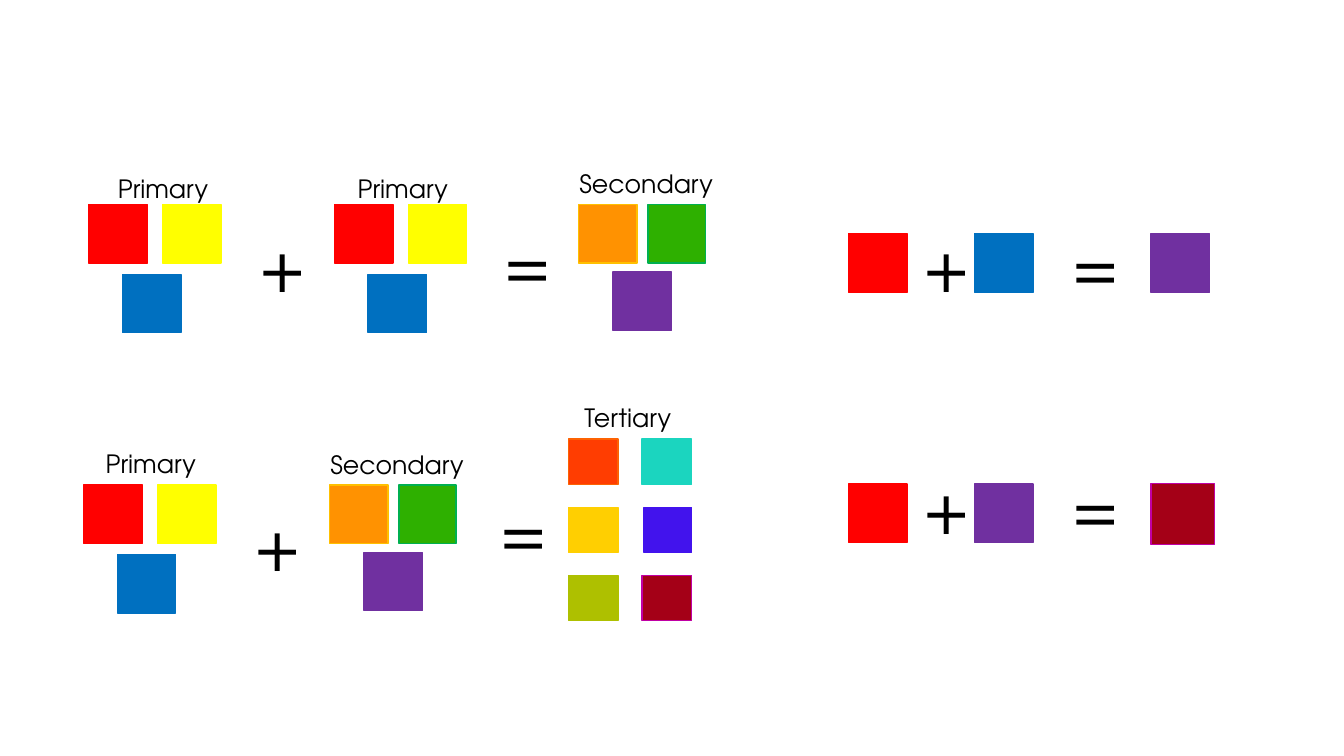
from pptx import Presentation
from pptx.dml.color import RGBColor
from pptx.enum.shapes import MSO_SHAPE
from pptx.util import Pt

FONT = "TeX Gyre Adventor"
SIDE = 41.8
BLACK = RGBColor(0, 0, 0)
RED = RGBColor(0xFF, 0, 0)
YELLOW = RGBColor(0xFF, 0xFF, 0)
BLUE = RGBColor(0, 0x70, 0xC0)
ORANGE = RGBColor(0xFF, 0x92, 0x01)
AMBER = RGBColor(0xFF, 0xC0, 0)
GREEN = RGBColor(0x2E, 0xB0, 0)
JADE = RGBColor(0, 0xB0, 0x50)
PURPLE = RGBColor(0x70, 0x30, 0xA0)
VERMILION = RGBColor(0xFF, 0x3D, 0x01)
FLAME = RGBColor(0xFD, 0x62, 0x03)
TEAL = RGBColor(0x1B, 0xD5, 0xBF)
GOLD = RGBColor(0xFF, 0xCF, 0x01)
INDIGO = RGBColor(0x42, 0x13, 0xED)
LIME = RGBColor(0xAE, 0xC0, 0)
CRIMSON = RGBColor(0xA4, 0, 0x17)
MAGENTA = RGBColor(0xC0, 0, 0xA5)
EDGES = {ORANGE: AMBER, GREEN: JADE, VERMILION: FLAME, CRIMSON: MAGENTA}


def swatch(slide, left, top, color, width=SIDE, height=SIDE):
    shape = slide.shapes.add_shape(
        MSO_SHAPE.RECTANGLE, Pt(left), Pt(top), Pt(width), Pt(height))
    shape.shadow.inherit = False
    shape.fill.solid()
    shape.fill.fore_color.rgb = color
    shape.line.color.rgb = EDGES.get(color, color)
    shape.line.width = Pt(1)


def write(slide, text, left, top, width, height, size):
    box = slide.shapes.add_textbox(Pt(left), Pt(top), Pt(width), Pt(height))
    frame = box.text_frame
    frame.word_wrap = True
    frame.margin_right = 0
    line = frame.paragraphs[0]
    line.text = text
    line.font.name = FONT
    line.font.size = Pt(size)
    line.font.color.rgb = BLACK


def label(slide, text, left, top):
    write(slide, text, left, top, 118, 29, 18)


def sign(slide, text, left, top):
    write(slide, text, left, top, 60, 65.5, 48)


def primary(slide, left, top, inset, rise):
    """Three primary swatches, with the label inset and raised from them."""
    swatch(slide, left, top, RED)
    swatch(slide, left + 52.6, top, YELLOW)
    swatch(slide, left + 24, top + 49.7, BLUE)
    label(slide, "Primary", left + inset, top - rise)


def secondary(slide, left, top):
    swatch(slide, left, top, ORANGE)
    swatch(slide, left + 49.5, top, GREEN, 41)
    swatch(slide, left + 24.5, top + 48.2, PURPLE)
    label(slide, "Secondary", left - 6.5, top - 29.2)


def tertiary(slide, left, top):
    rows = [(VERMILION, TEAL), (GOLD, INDIGO), (LIME, CRIMSON)]
    for row, pair in enumerate(rows):
        for col, color in enumerate(pair):
            trim = 1.4 if color == INDIGO else 0
            swatch(slide, left + 52.6 * col + trim, top + 48.7 * row,
                   color, 35.3 - trim, 32.4)
    label(slide, "Tertiary", left + 4.3, top - 29.5)


def mix(slide, left, top, first, second, result, rise, size=(SIDE, SIDE)):
    """One worked sum of two colours, its signs raised above the swatches."""
    swatch(slide, left, top, first)
    sign(slide, "+", left + 45.4, top - rise)
    swatch(slide, left + 90, top, second)
    sign(slide, "=", left + 152, top - rise)
    swatch(slide, left + 216, top, result, *size)


def main():
    deck = Presentation()
    deck.slide_width, deck.slide_height = Pt(960), Pt(540)
    slide = deck.slides.add_slide(deck.slide_layouts[6])

    primary(slide, 63.4, 146.2, 13.7, 26)
    sign(slide, "+", 177.8, 156.2)
    primary(slide, 239, 146.2, 9.4, 26)
    sign(slide, "=", 352.8, 154.8)
    secondary(slide, 413.3, 146.2)

    primary(slide, 59.8, 346.3, 8.6, 29.5)
    sign(slide, "+", 174.2, 355)
    secondary(slide, 235.4, 346.3)
    sign(slide, "=", 349.9, 346.3)
    tertiary(slide, 406.1, 313.6)

    mix(slide, 606.2, 167, RED, BLUE, PURPLE, 10.8)
    mix(slide, 606.2, 345.6, RED, PURPLE, CRIMSON, 16.9, (45.4, 43.2))
    deck.save("out.pptx")


if __name__ == "__main__":
    main()
